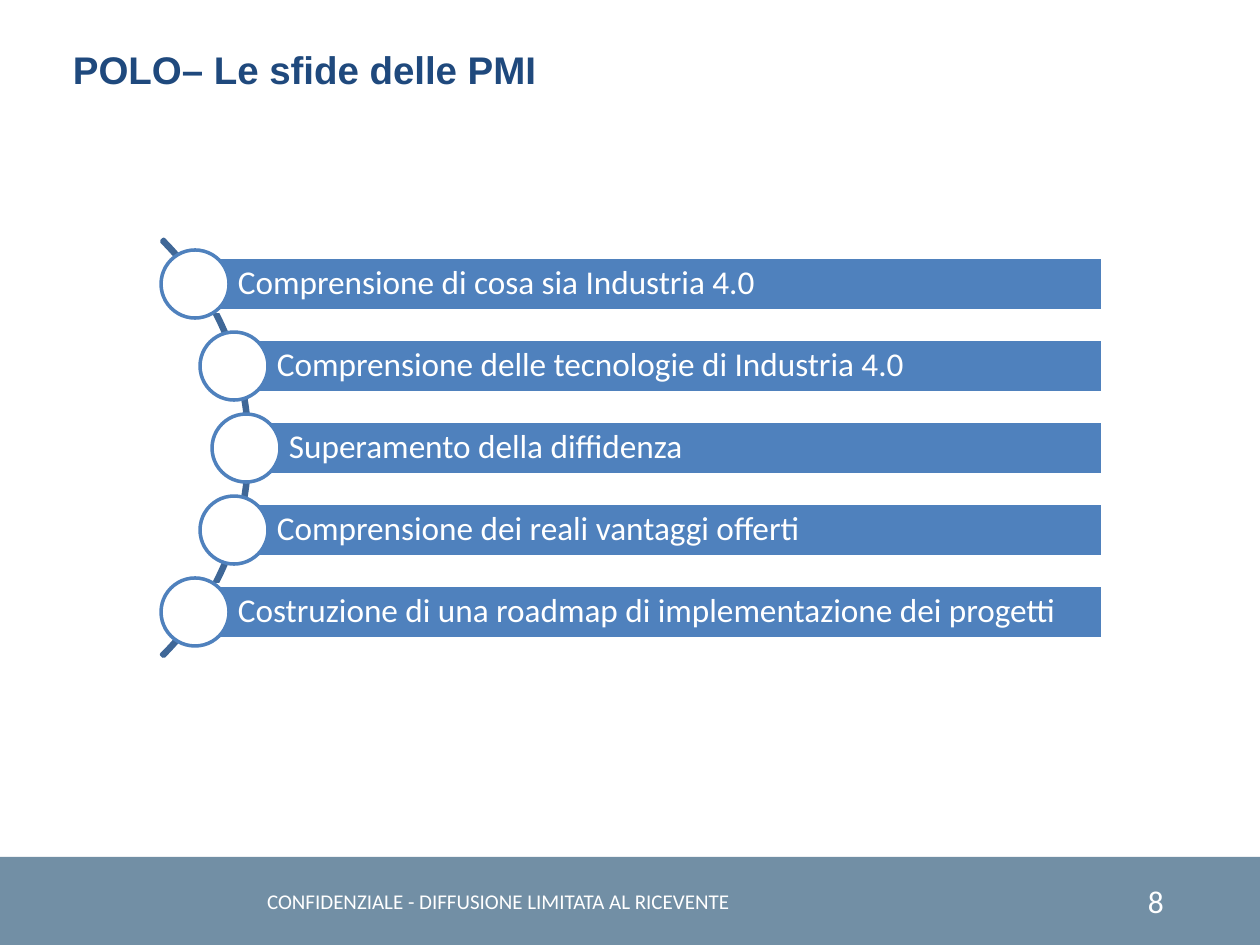
from dataclasses import dataclass
from math import sqrt

from pptx import Presentation
from pptx.dml.color import RGBColor
from pptx.enum.shapes import MSO_SHAPE
from pptx.enum.text import MSO_ANCHOR, PP_ALIGN
from pptx.util import Emu, Pt

RECT, OVAL, ARC = MSO_SHAPE.RECTANGLE, MSO_SHAPE.OVAL, MSO_SHAPE.BLOCK_ARC
TOP, MIDDLE = MSO_ANCHOR.TOP, MSO_ANCHOR.MIDDLE
LEFT, CENTER = PP_ALIGN.LEFT, PP_ALIGN.CENTER
PX_PER_INCH = 126
EMU_PER_PX = 914400 / PX_PER_INCH


@dataclass(frozen=True)
class Theme:
    white: str = "FFFFFF"
    navy: str = "1F497D"
    bar: str = "4F81BD"
    arc: str = "3F6797"
    footer: str = "728FA5"
    heading_font: str = "Arial"
    body_font: str = "Calibri"
    title_size: int = 22
    challenge_size: int = 19
    number_size: int = 18
    notice_size: int = 12
    line_width: int = 2


def px(length):
    return Emu(round(length * EMU_PER_PX))


def write(frame, text, *, size, color, font, bold=False, align=LEFT,
          anchor=TOP, insets=(13, 6, 13, 6), spacing=1.0):
    frame.word_wrap = True
    frame.vertical_anchor = anchor
    (frame.margin_left, frame.margin_top,
     frame.margin_right, frame.margin_bottom) = map(px, insets)
    paragraph = frame.paragraphs[0]
    paragraph.alignment = align
    paragraph.line_spacing = spacing
    run = paragraph.add_run()
    run.text = text
    run.font.size = Pt(size)
    run.font.name = font
    run.font.bold = bold
    run.font.color.rgb = RGBColor.from_string(color)


class SlideBuilder:
    def __init__(self, slide, theme):
        self.slide = slide
        self.theme = theme

    def shape(self, preset, box, fill=None, line=None, adjustments=()):
        shape = self.slide.shapes.add_shape(preset, *map(px, box))
        shape.shadow.inherit = False
        for index, value in enumerate(adjustments):
            shape.adjustments[index] = value
        if fill:
            shape.fill.solid()
            shape.fill.fore_color.rgb = RGBColor.from_string(fill)
        else:
            shape.fill.background()
        if line:
            shape.line.color.rgb = RGBColor.from_string(line)
            shape.line.width = Pt(self.theme.line_width)
        else:
            shape.line.fill.background()
        return shape

    def text(self, box, text, **style):
        frame = self.slide.shapes.add_textbox(*map(px, box)).text_frame
        write(frame, text, **style)

    def challenge(self, center_x, center_y, right, text):
        theme = self.theme
        bar_height, circle = 54, 68
        bar = self.shape(
            RECT, (center_x, center_y - bar_height // 2, right - center_x, bar_height),
            fill=theme.bar, line=theme.white)
        write(bar.text_frame, text, size=theme.challenge_size, color=theme.white,
              font=theme.body_font, anchor=MIDDLE, insets=(43, 6, 6, 6), spacing=0.9)
        self.shape(OVAL, (center_x - circle // 2, center_y - circle // 2, circle, circle),
                   fill=theme.white, line=theme.bar)


def main():
    theme = Theme()
    presentation = Presentation()
    presentation.slide_width, presentation.slide_height = px(1260), px(945)
    blank = presentation.slide_layouts[6]
    builder = SlideBuilder(presentation.slides.add_slide(blank), theme)

    # Footer band
    builder.shape(RECT, (0, 857, 1260, 88), fill=theme.footer)

    # Arc, with the challenges set along a slightly smaller circle
    arc_x, arc_y, arc_radius = -45, 448, 295
    builder.shape(ARC, (arc_x - arc_radius, arc_y - arc_radius,
                        2 * arc_radius, 2 * arc_radius),
                  line=theme.arc, adjustments=(189, 27, 0.005))
    challenges = (
        "Comprensione di cosa sia Industria 4.0",
        "Comprensione delle tecnologie di Industria 4.0",
        "Superamento della diffidenza",
        "Comprensione dei reali vantaggi offerti",
        "Costruzione di una roadmap di implementazione dei progetti",
    )
    node_radius, pitch, bar_right = 291, 82, 1103
    for index, challenge in enumerate(challenges):
        offset = (index - len(challenges) // 2) * pitch
        node_x = arc_x + round(sqrt(node_radius ** 2 - offset ** 2))
        builder.challenge(node_x, arc_y + offset, bar_right, challenge)

    # Slide number, confidentiality notice and title
    builder.text((1135, 876, 74, 50), "8", size=theme.number_size,
                 color=theme.white, font=theme.body_font)
    builder.text((40, 876, 917, 50), "CONFIDENZIALE - DIFFUSIONE LIMITATA AL RICEVENTE",
                 size=theme.notice_size, color=theme.white, font=theme.body_font,
                 align=CENTER, anchor=MIDDLE)
    builder.text((60, 40, 1182, 88), "POLO– Le sfide delle PMI",
                 size=theme.title_size, color=theme.navy,
                 font=theme.heading_font, bold=True)

    presentation.save("out.pptx")


if __name__ == "__main__":
    main()
